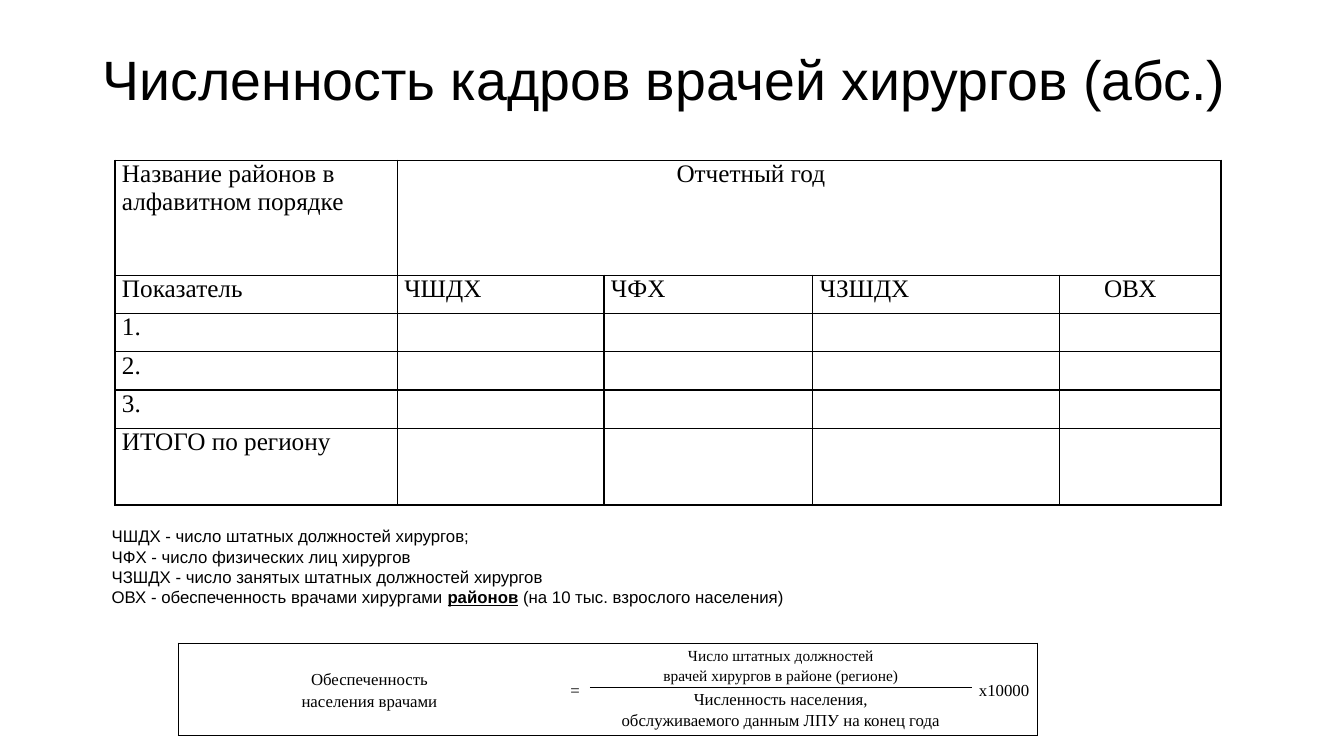
from dataclasses import dataclass, field
from itertools import product
from lxml import etree
from pptx import Presentation, util as u
from pptx.dml.color import RGBColor
from pptx.enum import shapes as sh, text as tx
from pptx.oxml.ns import qn

PX = 9144  # one px is a hundredth of an inch
INK, PAPER = "000000", "FFFFFF"
SANS, SERIF = "Arial", "Times New Roman"
PLAIN = "{2D5ABB26-0587-4C30-8999-92F81FD0307C}"
MID, TOP = tx.MSO_ANCHOR.MIDDLE, tx.MSO_ANCHOR.TOP
LEFT, MIDST = tx.PP_ALIGN.LEFT, tx.PP_ALIGN.CENTER


@dataclass
class Look:
    name: str
    size: float
    space: float = 1.0
    align: tx.PP_ALIGN = LEFT


@dataclass
class Cell:
    row: int
    col: int
    lines: list[str]
    look: Look
    rows: int = 1
    cols: int = 1
    left: int = 7
    anchor: tx.MSO_ANCHOR = TOP


@dataclass
class Grid:
    at: tuple[int, int]
    cols: list[int]
    rows: list[int]
    cells: list[Cell]
    edges: dict[tuple[int, int], dict[str, float]] = field(default_factory=dict)


def px(n: int) -> int:
    return u.Emu(n * PX)


def tint(code: str) -> RGBColor:
    return RGBColor.from_string(code)


def apply(item, opts: dict) -> None:
    for key, val in opts.items():
        setattr(item, key, val)


def write(frame, lines: list[str], look: Look) -> None:
    """Fill a frame; text between asterisks is bold and underlined."""
    for i, line in enumerate(lines):
        para = frame.paragraphs[0] if i == 0 else frame.add_paragraph()
        apply(para, {"alignment": look.align, "line_spacing": look.space})
        for j, part in enumerate(line.split("*")):
            run = para.add_run()
            run.text = part
            mark = j % 2 == 1
            apply(run.font, {"name": look.name, "size": u.Pt(look.size),
                             "bold": mark, "underline": mark})
            run.font.color.rgb = tint(INK)


def edge(cell, sides: dict[str, float]) -> None:
    props = cell._tc.get_or_add_tcPr()
    for side in "LRTB":
        if side in sides:
            line = etree.SubElement(props, qn(f"a:ln{side}"), w=str(u.Pt(sides[side])))
            fill = etree.SubElement(line, qn("a:solidFill"))
            etree.SubElement(fill, qn("a:srgbClr"), val=INK)


def draw_grid(slide, grid: Grid) -> None:
    size = len(grid.rows), len(grid.cols)
    frame = slide.shapes.add_table(*size, *map(px, grid.at),
                                   px(sum(grid.cols)), px(sum(grid.rows)))
    table = frame.table
    apply(table, {"first_row": False, "horz_banding": False})
    table._tbl.tblPr.find(qn("a:tableStyleId")).text = PLAIN
    for col, wide in zip(table.columns, grid.cols):
        col.width = px(wide)
    for row, high in zip(table.rows, grid.rows):
        row.height = px(high)
    for spot in product(*map(range, size)):
        cell = table.cell(*spot)
        apply(cell, {"margin_left": px(7), "margin_right": px(7),
                     "margin_top": 0, "margin_bottom": 0})
        edge(cell, grid.edges.get(spot, {}))
        cell.fill.background()
    for c in grid.cells:
        cell = table.cell(c.row, c.col)
        if c.rows * c.cols > 1:
            cell.merge(table.cell(c.row + c.rows - 1, c.col + c.cols - 1))
        apply(cell, {"margin_left": px(c.left), "vertical_anchor": c.anchor})
        write(cell.text_frame, c.lines, c.look)


def draw_box(slide, box: tuple[int, int, int, int], inset: int,
             lines: list[str], look: Look) -> None:
    shape = slide.shapes.add_shape(sh.MSO_SHAPE.RECTANGLE, *map(px, box))
    shape.shadow.inherit = False
    shape.fill.solid()
    shape.fill.fore_color.rgb = tint(PAPER)
    shape.line.fill.background()
    apply(shape.text_frame, {"word_wrap": True, "vertical_anchor": TOP,
                             "margin_left": px(10), "margin_right": px(10),
                             "margin_top": px(inset), "margin_bottom": 0})
    write(shape.text_frame, lines, look)


def staff() -> Grid:
    body = Look(SERIF, 18)
    names = ["Показатель", "1.", "2.", "3.", "ИТОГО по региону"]
    heads = ["ЧШДХ", "ЧФХ", "ЧЗШДХ"]
    cells = [Cell(0, 0, ["Название районов в алфавитном порядке"], body),
             Cell(0, 1, ["Отчетный год"], body, cols=4, left=277),
             Cell(1, 4, ["ОВХ"], body, left=44)]
    cells += [Cell(i, 0, [name], body) for i, name in enumerate(names, 1)]
    cells += [Cell(1, i, [head], body) for i, head in enumerate(heads, 1)]
    full = {spot: dict.fromkeys("LRTB", 1) for spot in product(range(6), range(5))}
    return Grid((114, 159), [280, 205, 207, 245, 160],
                [114, 38, 38, 38, 38, 76], cells, full)


def ratio() -> Grid:
    mid = Look(SERIF, 12, 1.15, MIDST)
    over = Look(SERIF, 11, 1.15, MIDST)
    side = Look(SERIF, 12, 1.15)
    cells = [
        Cell(0, 0, ["Обеспеченность", "населения врачами"], mid, rows=2, anchor=MID),
        Cell(0, 1, ["="], mid, rows=2, anchor=MID),
        Cell(0, 2, ["Число штатных должностей",
                    "врачей хирургов в районе (регионе)"], over, anchor=MID),
        Cell(0, 3, ["x10000"], side, rows=2, anchor=MID),
        Cell(1, 2, ["Численность населения,",
                    "обслуживаемого данным ЛПУ на конец года"], mid)]
    # Outer frame, then the fraction bar; merged cells carry both ends
    edges = {}
    for row, col in product(range(2), range(4)):
        sides = {"TB"[row]: 1}
        if col == 2:
            sides["BT"[row]] = 1.5
        else:
            sides["BT"[row]] = 1
            if row == 1:
                del sides["T"]
        if col in (0, 3):
            sides["L" if col == 0 else "R"] = 1
        edges[row, col] = sides
    return Grid((177, 638), [379, 29, 379, 65], [44, 48], cells, edges)


def main() -> None:
    deck = Presentation()
    apply(deck, {"slide_width": px(1333), "slide_height": px(750)})
    slide = deck.slides.add_slide(deck.slide_layouts[6])
    # Heading
    draw_box(slide, (92, 40, 1150, 145), 12,
             ["Численность кадров врачей хирургов (абс.)"], Look(SANS, 39.6, 0.9))
    # Staff table
    draw_grid(slide, staff())
    # Formula
    draw_grid(slide, ratio())
    # Key to the abbreviations
    draw_box(slide, (101, 517, 693, 116), 5,
             ["ЧШДХ - число штатных должностей хирургов;",
              "ЧФХ - число физических лиц хирургов",
              "ЧЗШДХ - число занятых штатных должностей хирургов",
              "ОВХ - обеспеченность врачами хирургами *районов* (на 10 тыс. взрослого населения)"],
             Look(SANS, 12))
    deck.save("out.pptx")


if __name__ == "__main__":
    main()
